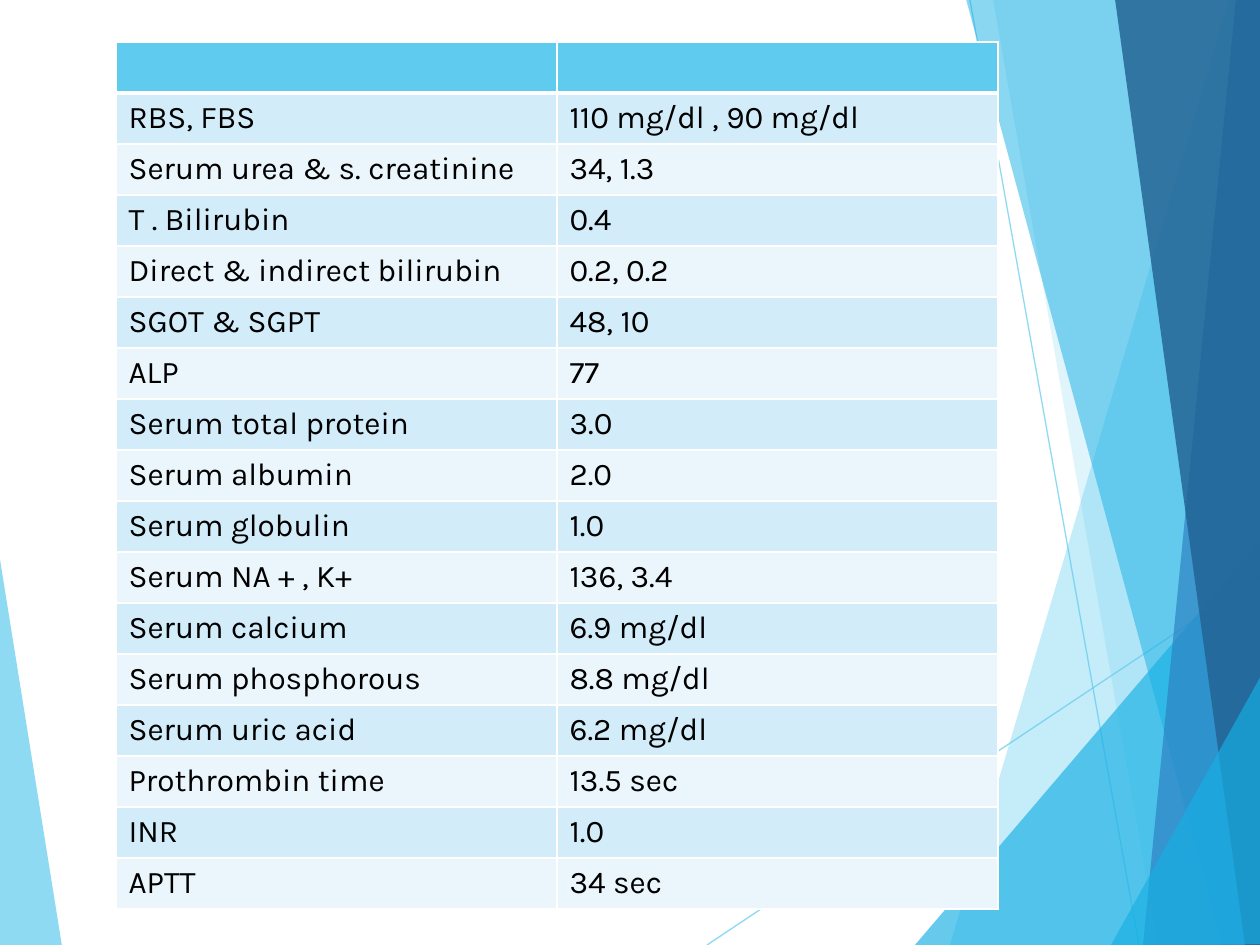
from dataclasses import dataclass

from lxml.etree import SubElement
from pptx import Presentation
from pptx.dml.color import RGBColor
from pptx.enum.shapes import MSO_CONNECTOR
from pptx.oxml.ns import qn
from pptx.util import Pt

PX = 914400 / 126


@dataclass(frozen=True)
class Theme:
    sky: str = "5FCBEF"
    cyan: str = "17B0E4"
    blue: str = "2E83C3"
    navy: str = "226292"
    band_dark: str = "D2ECF9"
    band_light: str = "EAF6FC"
    border: str = "FFFFFF"
    text: str = "000000"
    font: str = "Karla"
    body_size: int = 18


theme = Theme()


def set_opacity(shape, percent):
    """Make the shape's only colour, fill or line, partly transparent."""
    color = next(shape._element.spPr.iter(qn("a:srgbClr")))
    SubElement(color, qn("a:alpha"), val=str(percent * 1000))


def write_text(cell, text, *, font=theme.font, size=theme.body_size, color=theme.text):
    paragraph = cell.text_frame.paragraphs[0]
    run = paragraph.add_run()
    run.text = text
    run.font.name = font
    run.font.size = Pt(size)
    run.font.color.rgb = RGBColor.from_string(color)


presentation = Presentation()
presentation.slide_width = round(1260 * PX)
presentation.slide_height = round(945 * PX)
slide = presentation.slides.add_slide(presentation.slide_layouts[6])

# Backdrop, from back to front: left facet, two thin lines, right facets
left_facet = (theme.sky, 70, [(-1, 553), (62, 946), (-1, 945)])
right_facets = [
    (theme.sky, 36, [(1229, 0), (950, 945), (1262, 946), (1261, 1)]),
    (theme.sky, 20, [(993, -1), (1158, 945), (1261, 945), (1261, -1)]),
    (theme.cyan, 66, [(915, 945), (1260, 541), (1261, 945)]),
    (theme.cyan, 50, [(966, -1), (1222, 945), (1261, 944), (1261, -1)]),
    (theme.blue, 70, [(1236, -1), (1143, 945), (1261, 945), (1260, -1)]),
    (theme.navy, 82, [(1115, -1), (1245, 945), (1262, 945), (1260, -1)]),
    (theme.cyan, 66, [(1111, 945), (1262, 674), (1262, 944)]),
]
thin_lines = [(707, 945, 1261, 576), (970, 0, 1139, 945)]

for color, opacity, points in [left_facet, *right_facets]:
    builder = slide.shapes.build_freeform(*points[0], scale=PX)
    builder.add_line_segments(points[1:], close=True)
    facet = builder.convert_to_shape()
    facet.shadow.inherit = False
    facet.fill.solid()
    facet.fill.fore_color.rgb = RGBColor.from_string(color)
    facet.line.fill.background()
    set_opacity(facet, opacity)

    if points is left_facet[2]:
        for ends in thin_lines:
            line = slide.shapes.add_connector(
                MSO_CONNECTOR.STRAIGHT, *(round(length * PX) for length in ends)
            )
            line.line.width = Pt(0.75)
            line.line.color.rgb = RGBColor.from_string(theme.sky)
            set_opacity(line, 70)
            SubElement(line._element.spPr, qn("a:effectLst"))

# Laboratory results, below an empty header row
results = [
    ("", ""),
    ("RBS, FBS", "110 mg/dl , 90 mg/dl"),
    ("Serum urea & s. creatinine", "34, 1.3"),
    ("T . Bilirubin", "0.4"),
    ("Direct & indirect bilirubin", "0.2, 0.2"),
    ("SGOT & SGPT", "48, 10"),
    ("ALP", "77"),
    ("Serum total protein", "3.0"),
    ("Serum albumin", "2.0"),
    ("Serum globulin", "1.0"),
    ("Serum NA + , K+", "136, 3.4"),
    ("Serum calcium", "6.9 mg/dl"),
    ("Serum phosphorous", "8.8 mg/dl"),
    ("Serum uric acid", "6.2 mg/dl"),
    ("Prothrombin time", "13.5 sec"),
    ("INR", "1.0"),
    ("APTT", "34 sec"),
]
table_left, table_top, table_width, row_height = 116, 42, 882, 51
table = slide.shapes.add_table(
    len(results), 2,
    round(table_left * PX), round(table_top * PX),
    round(table_width * PX), round(row_height * len(results) * PX),
).table

for row_index, row in enumerate(results):
    if row_index == 0:
        fill_color = theme.sky
    else:
        fill_color = theme.band_dark if row_index % 2 else theme.band_light
    for column_index, text in enumerate(row):
        cell = table.cell(row_index, column_index)
        if text:
            write_text(cell, text)
        properties = cell._tc.get_or_add_tcPr()
        for side in ("lnL", "lnR", "lnT", "lnB"):
            under_header = (row_index, side) in [(0, "lnB"), (1, "lnT")]
            border = SubElement(
                properties, qn(f"a:{side}"), w=str(Pt(3 if under_header else 1))
            )
            border_fill = SubElement(border, qn("a:solidFill"))
            SubElement(border_fill, qn("a:srgbClr"), val=theme.border)
        cell.fill.solid()
        cell.fill.fore_color.rgb = RGBColor.from_string(fill_color)

presentation.save("out.pptx")
